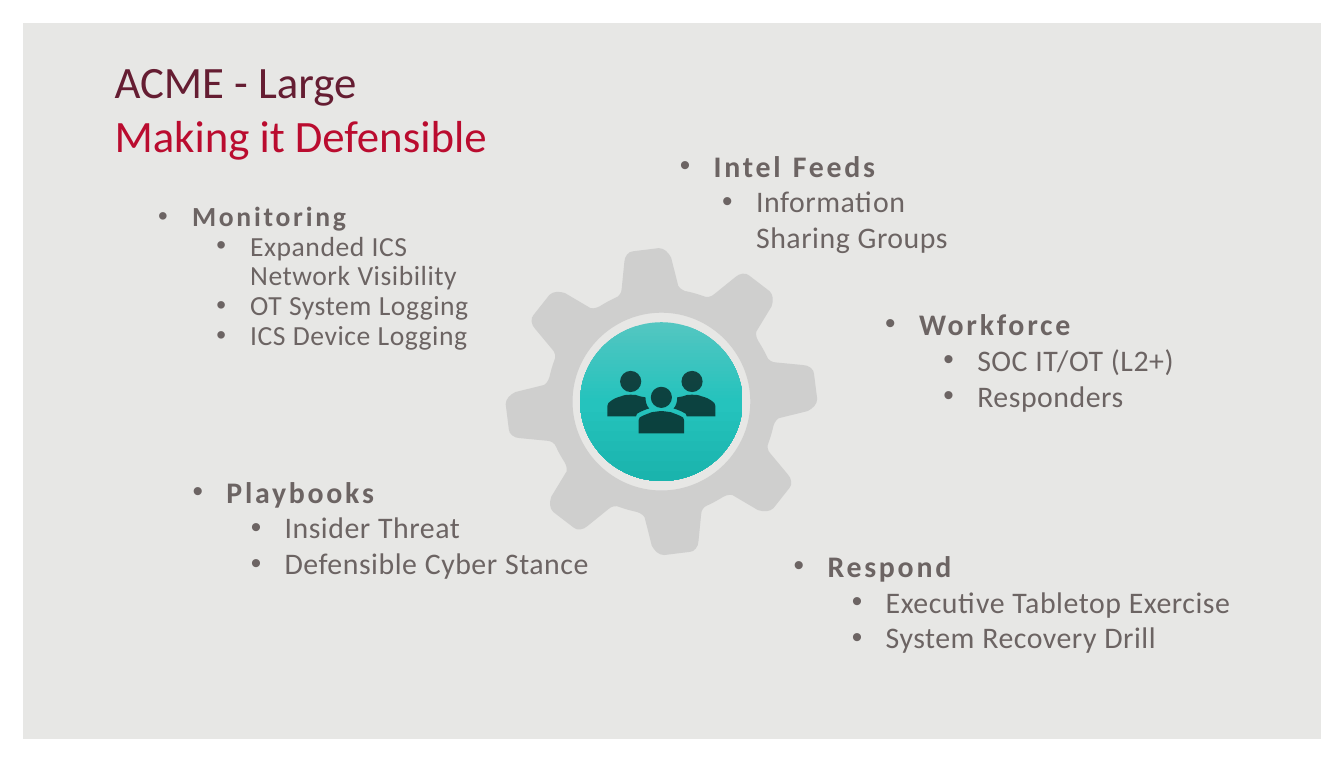
from copy import deepcopy
from math import cos, pi, sin

from lxml.etree import SubElement
from pptx import Presentation
from pptx.dml.color import RGBColor
from pptx.enum.shapes import MSO_SHAPE as Shape
from pptx.enum.text import MSO_ANCHOR as Anchor, MSO_AUTO_SIZE as AutoSize, PP_ALIGN as Align
from pptx.oxml.ns import qn
from pptx.util import Cm, Pt

BACKGROUND = RGBColor(0xE7, 0xE7, 0xE5)
WHITE = RGBColor(0xFF, 0xFF, 0xFF)
BLACK = RGBColor(0x00, 0x00, 0x00)
PLUM = RGBColor(0x65, 0x1D, 0x32)
CRIMSON = RGBColor(0xBA, 0x0C, 0x2F)
TEXT_GREY = RGBColor(0x6C, 0x64, 0x63)
GEAR_GREY = RGBColor(0xBF, 0xBF, 0xBF)
TEALS = (RGBColor(0x53, 0xC6, 0xC1), RGBColor(0x25, 0xC3, 0xBD), RGBColor(0x1A, 0xB4, 0xAD))

WIDTH, HEIGHT = 25.4, 14.4
CENTRE = (12.5, 7.59)

# Outlines are in cm from the gear centre: one point is a line, three are a curve.
TEETH = 8
TOOTH_START = [(0.46, -2.08)]
TOOTH = [
    [(0.38, -2.11), (0.30, -2.16), (0.30, -2.24)],
    [(0.18, -2.72)],
    [(0.13, -2.82), (0.05, -2.90), (-0.05, -2.90)],
    [(-0.53, -2.84)],
    [(-0.61, -2.84), (-0.69, -2.74), (-0.69, -2.64)],
    [(-0.74, -2.13)],
    [(-0.74, -2.06), (-0.79, -1.98), (-0.86, -1.96)],
    [(-0.97, -1.91), (-1.07, -1.85), (-1.15, -1.80)],
]
FRONT_HALF = [
    [(0, 0.18)],
    [(0.08, 0.18), (0.13, 0.20), (0.18, 0.20)],
    [(0.25, 0.23), (0.33, 0.25), (0.41, 0.30)],
    [(0.43, 0.33), (0.43, 0.36), (0.43, 0.38)],
    [(0.43, 0.60)],
]
SIDE_BODY = [
    [(-0.58, -0.13)],
    [(-0.51, -0.13), (-0.46, -0.13), (-0.41, -0.10)],
    [(-0.38, -0.10), (-0.33, -0.08), (-0.30, -0.08)],
    [(-0.30, 0), (-0.28, 0.08), (-0.23, 0.13)],
    [(-0.30, 0.15), (-0.38, 0.18), (-0.46, 0.23)],
    [(-0.46, 0.25), (-0.48, 0.25), (-0.48, 0.28)],
    [(-1.02, 0.28)],
    [(-1.02, 0.08)],
    [(-1.02, 0.05), (-0.99, 0), (-0.97, 0)],
    [(-0.91, -0.05), (-0.84, -0.08), (-0.76, -0.10)],
    [(-0.69, -0.13), (-0.64, -0.13), (-0.58, -0.13)],
]
HEADS = [(-0.58, -0.38), (0, -0.08), (0.58, -0.38)]

# left, top, width, height, heading indent, size, line spacing, heading, items
LISTS = [
    (2.11, 3.7, 7.75, 3.3, 1.27, 14.8, 0.9, "Monitoring",
     ["Expanded ICS Network Visibility", "OT System Logging", "ICS Device Logging"]),
    (11.67, 2.66, 7.57, 2.54, 1.57, 16, 1, "Intel Feeds", ["Information Sharing Groups"]),
    (2.76, 8.82, 8.94, 4.14, 1.27, 16, 1, "Playbooks",
     ["Insider Threat", "Defensible Cyber Stance"]),
    (15.85, 5.65, 8.13, 3.12, 1.27, 16, 1, "Workforce", ["SOC IT/OT (L2+)", "Responders"]),
    (14.12, 10.22, 9.53, 2.54, 1.27, 16, 1, "Respond",
     ["Executive Tabletop Exercise", "System Recovery Drill"]),
]


def rotate(segment, angle):
    return [(x * cos(angle) - y * sin(angle), x * sin(angle) + y * cos(angle))
            for x, y in segment]


def stretch(segments, factor):
    """Scale horizontally; a factor of -1 mirrors."""
    return [[(x * factor, y) for x, y in segment] for segment in segments]


def backwards(segments):
    """Run the same outline from its end to its start."""
    result = [segments[-1][-1:]]
    for previous, segment in zip(segments[-2::-1], segments[:0:-1]):
        result.append(segment[-2::-1] + previous[-1:] if len(segment) > 1 else previous[-1:])
    return result


def circle(x, y, radius):
    handle = 0.55 * radius
    quarter = [(radius, handle), (handle, radius), (0, radius)]
    segments = [[(radius, 0)]] + [rotate(quarter, i * pi / 2) for i in range(4)]
    return [[(x + dx, y + dy) for dx, dy in segment] for segment in segments]


class SlideBuilder:
    font = "Calibri"

    def __init__(self, slide):
        self.slide = slide
        self.shapes = slide.shapes
        slide.background.fill.solid()
        slide.background.fill.fore_color.rgb = BACKGROUND

    def paint(self, shape, color, opacity=100):
        shape.shadow.inherit = False
        shape.line.fill.background()
        shape.fill.solid()
        shape.fill.fore_color.rgb = color
        if opacity < 100:
            rgb = shape.fill._xPr.find(qn("a:solidFill"))[0]
            SubElement(rgb, qn("a:alpha"), val=str(opacity * 1000))

    def frame(self):
        shape = self.shapes.add_shape(Shape.FRAME, 0, 0, Cm(WIDTH), Cm(HEIGHT))
        shape.adjustments[0] = 0.03
        self.paint(shape, WHITE)

    def run(self, paragraph, text, size, color, bold=False, spacing=0):
        run = paragraph.add_run()
        run.text = text
        font = run.font
        font.name, font.size, font.bold = self.font, Pt(size), bold
        font.color.rgb = color
        if spacing:
            run._r.get_or_add_rPr().set("spc", str(round(spacing * 100)))

    def title(self, first, second):
        title = self.shapes.title
        title.left, title.top, title.width, title.height = Cm(1.91), Cm(0.86), Cm(21.6), Cm(2.31)
        frame = title.text_frame
        frame.auto_size = AutoSize.NONE
        frame.vertical_anchor = Anchor.BOTTOM
        paragraph = frame.paragraphs[0]
        paragraph.alignment = Align.LEFT
        self.run(paragraph, first, 24, PLUM)
        paragraph.add_line_break()
        self.run(paragraph, second, 24, CRIMSON)

    def bullet(self, paragraph, indent):
        properties = paragraph._p.get_or_add_pPr()
        properties.set("marL", str(Cm(indent)))
        properties.set("indent", str(-Cm(0.64)))
        color = SubElement(properties, qn("a:buClr"))
        SubElement(color, qn("a:srgbClr"), val=str(TEXT_GREY))
        SubElement(properties, qn("a:buFont"), typeface="Arial")
        SubElement(properties, qn("a:buChar"), char="•")

    def bullet_list(self, left, top, width, height, indent, size, line_spacing, heading, items):
        box = self.shapes.add_textbox(Cm(left), Cm(top), Cm(width), Cm(height))
        frame = box.text_frame
        frame.word_wrap = True
        for index, text in enumerate([heading, *items]):
            is_item = index > 0
            paragraph = frame.add_paragraph() if is_item else frame.paragraphs[0]
            self.bullet(paragraph, 2.37 if is_item else indent)
            paragraph.level = int(is_item)
            paragraph.line_spacing = line_spacing
            self.run(paragraph, text, size, TEXT_GREY, not is_item, 0.3 if is_item else 1.5)

    def outline(self, contours, color, opacity):
        """Draw closed contours of lines and curves as one shape."""
        placed = [[[(Cm(CENTRE[0] + x), Cm(CENTRE[1] + y)) for x, y in segment]
                   for segment in contour] for contour in contours]
        builder = self.shapes.build_freeform(*placed[0][0][0])
        for index, (start, *segments) in enumerate(placed):
            if index:
                builder.move_to(*start[0])
            builder.add_line_segments([point for segment in segments for point in segment])
        shape = builder.convert_to_shape()
        self.bend(shape, [segment for contour in placed for segment in contour[1:]])
        self.paint(shape, color, opacity)

    def bend(self, shape, segments):
        """Join each run of three lines that stands for a curve into a Bézier element."""
        lines = iter(list(shape._element.iter(qn("a:lnTo"))))
        for segment in segments:
            parts = [next(lines) for _ in segment]
            if len(parts) == 3:
                curve = parts[0].makeelement(qn("a:cubicBezTo"))
                parts[0].addprevious(curve)
                for part in parts:
                    curve.append(part[0])
                    part.getparent().remove(part)

    def gear(self):
        rim = [TOOTH_START] + [rotate(segment, -2 * pi * i / TEETH)
                               for i in range(TEETH) for segment in TOOTH]
        self.outline([stretch(rim, 1.015), circle(0, 0, 1.68)], GEAR_GREY, 60)

    def disc(self, width, height):
        shape = self.shapes.add_shape(Shape.OVAL, Cm(CENTRE[0] - width / 2),
                                      Cm(CENTRE[1] - height / 2), Cm(width), Cm(height))
        shape.shadow.inherit = False
        shape.line.fill.background()
        shape.fill.gradient()
        shape.fill.gradient_angle = 270
        stop_list = shape.fill._xPr.find(qn("a:gradFill")).find(qn("a:gsLst"))
        stop_list.append(deepcopy(stop_list[0]))
        for index, (stop, color) in enumerate(zip(shape.fill.gradient_stops, TEALS)):
            stop.position = index / 2
            stop.color.rgb = color

    def people(self):
        front = FRONT_HALF + backwards(stretch(FRONT_HALF, -1))
        bodies = [front, stretch(SIDE_BODY, -1), SIDE_BODY]
        self.outline(bodies + [circle(x, y, 0.2) for x, y in HEADS], BLACK, 66)


def main():
    presentation = Presentation()
    presentation.slide_width, presentation.slide_height = Cm(WIDTH), Cm(HEIGHT)
    builder = SlideBuilder(presentation.slides.add_slide(presentation.slide_layouts[5]))
    builder.frame()
    builder.title("ACME - Large", "Making it Defensible")
    for content in LISTS:
        builder.bullet_list(*content)
    builder.gear()
    builder.disc(3.07, 3)
    builder.people()
    presentation.save("out.pptx")


if __name__ == "__main__":
    main()
